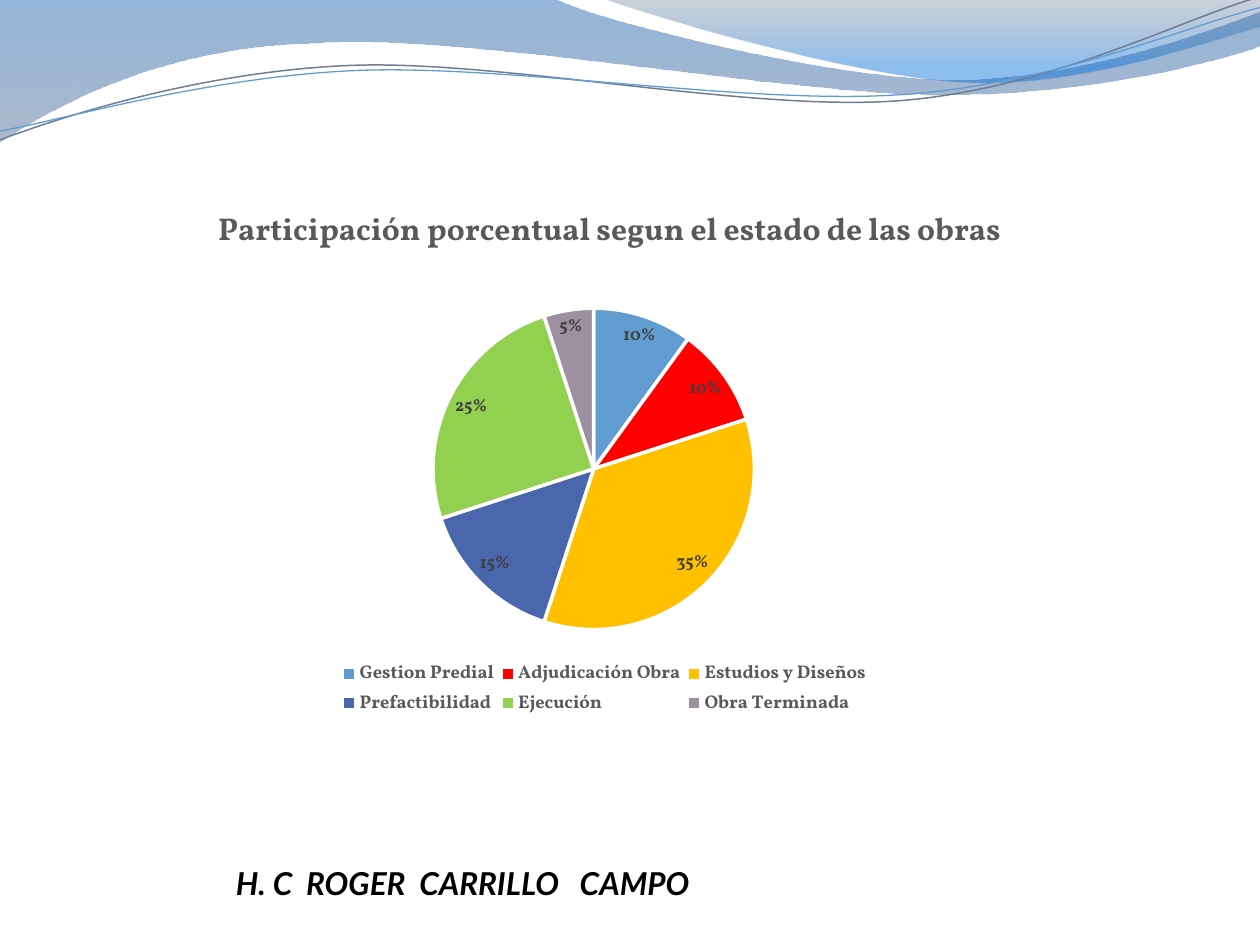
import math

import pptx
import pptx.chart.data
import pptx.dml.color
import pptx.enum.chart
import pptx.enum.text
import pptx.oxml.ns
import pptx.util
from lxml import etree

Cm = pptx.util.Cm
Pt = pptx.util.Pt
RGB = pptx.dml.color.RGBColor
qn = pptx.oxml.ns.qn

NAVY = RGB(0x12, 0x5E, 0xAA)
SLATE = RGB(0x69, 0x7F, 0xA4)
GREY_BLUE = RGB(0x59, 0x69, 0x82)
BRIGHT_BLUE = RGB(0x06, 0x70, 0xDA)
LINE_GREY = RGB(0x70, 0x7E, 0x95)
SKY = RGB(0x62, 0x9D, 0xD1)
RED = RGB(0xFF, 0, 0)
AMBER = RGB(0xFF, 0xC0, 0)
INDIGO = RGB(0x4A, 0x66, 0xAC)
GREEN = RGB(0x92, 0xD0, 0x50)
MAUVE = RGB(0x9D, 0x90, 0xA0)
TEXT_GREY = RGB(0x59, 0x59, 0x59)
LABEL_GREY = RGB(0x40, 0x40, 0x40)
BLACK = RGB(0, 0, 0)
WHITE = RGB(0xFF, 0xFF, 0xFF)

CM_PER_INCH = 2.54
TILT = -2.7

WIDE_WAVE = [
    (0, 0), (4.4, -0.01),
    (4.76, 0.17, 6.64, 0.63, 7.58, 0.63), (8.53, 0.63, 9.58, 0.26, 10, 0.09),
    (10.01, 0.36),
    (9.83, 0.44, 8.7, 0.76, 7.46, 0.75), (6.22, 0.75, 3.82, 0.28, 2.57, 0.34),
    (1.29, 0.36, 0.46, 0.83, -0.01, 1.13),
]
RIGHT_WAVE = [
    (4.79, -0.01),
    (5.09, 0.11, 6.82, 0.62, 7.69, 0.65), (8.56, 0.69, 9.61, 0.32, 10, 0.21),
    (10, 0),
]
GREY_CURVE = [
    (0, 1.11),
    (0.48, 0.93, 1.58, 0.57, 2.77, 0.52), (3.95, 0.47, 5.93, 0.89, 7.13, 0.8),
    (8.33, 0.71, 9.38, 0.15, 9.98, -0.02),
]
BLUE_CURVE = [
    (0, 1.04),
    (0.47, 0.96, 1.64, 0.61, 2.83, 0.56), (4.03, 0.51, 5.97, 0.84, 7.17, 0.75),
    (8.36, 0.67, 9.41, 0.21, 10, 0.06),
]
STATES = [
    ("Gestion Predial", 0.10, SKY),
    ("Adjudicación Obra", 0.10, RED),
    ("Estudios y Diseños", 0.35, AMBER),
    ("Prefactibilidad", 0.15, INDIGO),
    ("Ejecución", 0.25, GREEN),
    ("Obra Terminada", 0.05, MAUVE),
]


def turn(path, pivot, degrees):
    cx, cy = pivot
    c, s = math.cos(math.radians(degrees)), math.sin(math.radians(degrees))
    turned = []
    for segment in path:
        pairs = zip(segment[::2], segment[1::2])
        turned.append(tuple(v for x, y in pairs for v in (
            cx + (x - cx) * c - (y - cy) * s,
            cy + (x - cx) * s + (y - cy) * c)))
    return turned


class Slide:
    chart_font = "Vollkorn"
    text_font = "Lato"

    def __init__(self, prs):
        self.s = prs.slides.add_slide(prs.slide_layouts[6])

    def outline(self, path, closed):
        path = [tuple(Cm(v * CM_PER_INCH) for v in segment) for segment in path]
        builder = self.s.shapes.build_freeform(*path[0])
        builder.add_line_segments([segment[-2:] for segment in path[1:]], close=closed)
        sp = builder.convert_to_shape()
        sp.shadow.inherit = False
        steps = list(sp._element.iter(qn("a:lnTo")))
        for step, segment in zip(steps, path[1:]):
            if len(segment) == 6:
                curve = etree.Element(qn("a:cubicBezTo"))
                for x, y in zip(segment[::2], segment[1::2]):
                    etree.SubElement(curve, qn("a:pt"),
                                     x=str(x - sp.left), y=str(y - sp.top))
                step.getparent().replace(step, curve)
        return sp

    def wave(self, path, stops):
        sp = self.outline(path, True)
        sp.line.fill.background()
        sp.fill.gradient()
        sp.fill.gradient_angle = 270
        for stop, (position, color, _) in zip(sp.fill.gradient_stops, stops):
            stop.position = position
            stop.color.rgb = color
        clrs = sp._element.spPr.iter(qn("a:srgbClr"))
        for clr, (_, _, opacity) in zip(clrs, stops):
            etree.SubElement(clr, qn("a:alpha"), val=str(opacity * 1000))

    def curve(self, path, pivot, color, width):
        sp = self.outline(turn(path, pivot, -TILT), False)
        sp.rotation = TILT
        sp.fill.background()
        sp.line.color.rgb = color
        sp.line.width = Pt(width)

    def font(self, font, name, size, color, italic=None):
        font.name, font.size, font.bold, font.italic = name, Pt(size), True, italic
        font.color.rgb = color

    def text(self, text, x, y, w, h, size):
        tf = self.s.shapes.add_textbox(Cm(x), Cm(y), Cm(w), Cm(h)).text_frame
        tf.word_wrap = True
        p = tf.paragraphs[0]
        p.text = text
        p.alignment = pptx.enum.text.PP_ALIGN.CENTER
        self.font(p.font, self.text_font, size, BLACK, True)

    def layout(self, element, index, target=None, **box):
        for old in element.findall(qn("c:layout")):
            element.remove(old)
        layout = etree.Element(qn("c:layout"))
        manual = etree.SubElement(layout, qn("c:manualLayout"))
        if target:
            etree.SubElement(manual, qn("c:layoutTarget"), val=target)
        for axis in "xy":
            etree.SubElement(manual, qn(f"c:{axis}Mode"), val="edge")
        for key, value in box.items():
            etree.SubElement(manual, qn(f"c:{key}"), val=str(value))
        element.insert(index, layout)

    def pie(self, title, states, x, y, w, h):
        data = pptx.chart.data.CategoryChartData(number_format="0%")
        data.categories = [name for name, _, _ in states]
        data.add_series("Series 1", [value for _, value, _ in states])
        chart = self.s.shapes.add_chart(
            pptx.enum.chart.XL_CHART_TYPE.PIE, Cm(x), Cm(y), Cm(w), Cm(h), data).chart
        chart.font.name, chart.font.size = self.chart_font, Pt(10)
        chart.font.color.rgb = BLACK
        chart.has_title = True
        tf = chart.chart_title.text_frame
        tf.text = title
        self.font(tf.paragraphs[0].font, self.chart_font, 18, TEXT_GREY)
        self.layout(chart.chart_title._element, 1, x=0.15, y=0.03)

        chart.has_legend = True
        legend = chart.legend
        legend.position = pptx.enum.chart.XL_LEGEND_POSITION.BOTTOM
        legend.include_in_layout = False
        self.font(legend.font, self.chart_font, 10.5, TEXT_GREY)
        self.layout(legend._element, 1, x=0.26, y=0.88, w=0.48, h=0.12)

        plot = chart.plots[0]
        plot.vary_by_categories = True
        self.layout(chart._chartSpace.chart.plotArea, 0, "inner",
                    x=0.34, y=0.23, w=0.3, h=0.6)
        for i, (_, _, color) in enumerate(states):
            fmt = plot.series[0].points[i].format
            fmt.fill.solid()
            fmt.fill.fore_color.rgb = color
            fmt.line.color.rgb = WHITE
            fmt.line.width = Pt(2)
        labels = plot.series[0].data_labels
        labels.show_value = True
        labels.number_format = "0%"
        labels.number_format_is_linked = False
        labels.position = pptx.enum.chart.XL_LABEL_POSITION.BEST_FIT
        self.font(labels.font, self.chart_font, 10, LABEL_GREY)


def main():
    prs = pptx.Presentation()
    prs.slide_width, prs.slide_height = Cm(25.4), Cm(19.05)
    slide = Slide(prs)
    slide.wave(WIDE_WAVE, [(0, NAVY, 45), (1, SLATE, 55)])
    slide.wave(RIGHT_WAVE, [(0, GREY_BLUE, 30), (0.8, BRIGHT_BLUE, 45)])
    slide.curve(GREY_CURVE, (4.99, 0.58), LINE_GREY, 0.85)
    slide.curve(BLUE_CURVE, (5, 0.59), SKY, 0.75)
    slide.text(" H. C  ROGER  CARRILLO   CAMPO", 3.71, 17.3, 11.1, 1.04, 18)
    slide.pie("Participación porcentual segun el estado de las obras", STATES,
              0.89, 3.73, 22.61, 10.8)
    prs.save("out.pptx")


if __name__ == "__main__":
    main()
